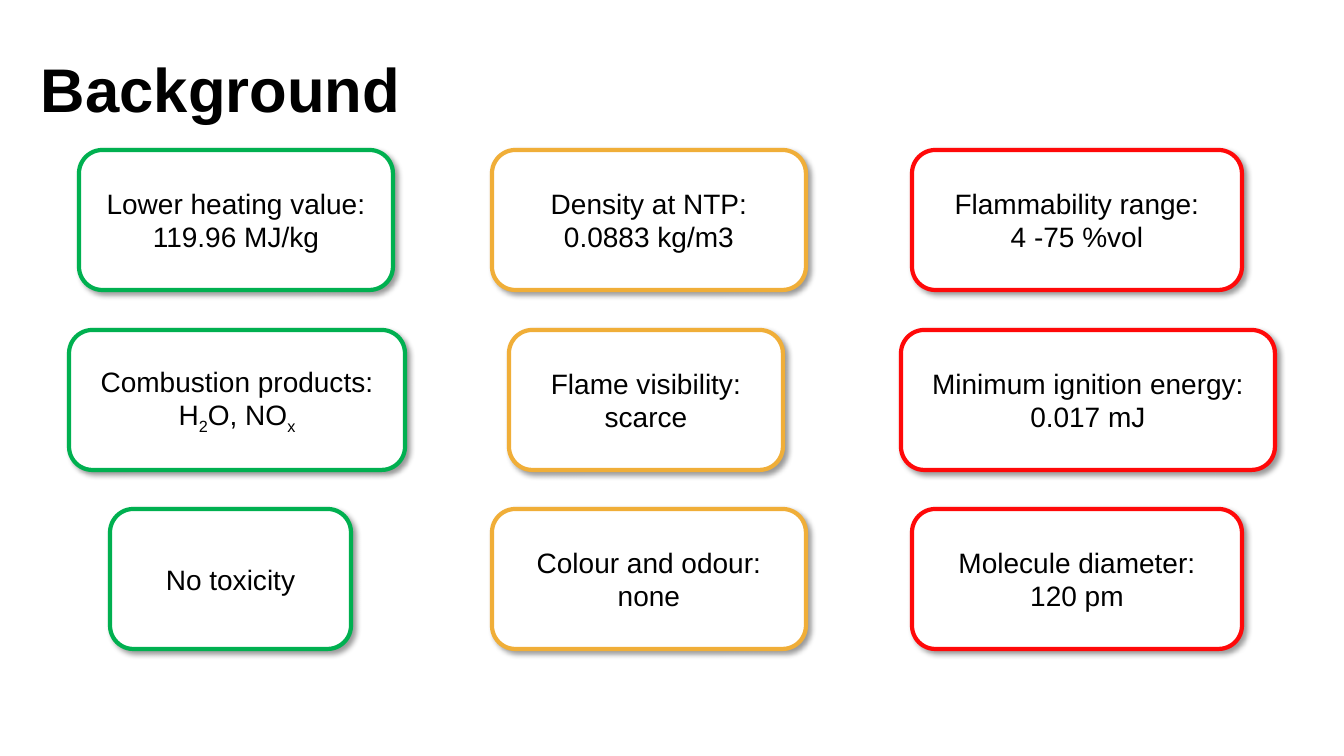
from lxml import etree
from pptx import Presentation
from pptx.dml.color import RGBColor
from pptx.enum.shapes import MSO_SHAPE
from pptx.enum.text import MSO_ANCHOR, PP_ALIGN
from pptx.oxml import parse_xml
from pptx.oxml.ns import nsdecls, qn
from pptx.util import Pt

PX = 914400 / 100.8
COLORS = {
    "white": "FFFFFF",
    "black": "000000",
    "green": "00B050",
    "amber": "F0AE38",
    "red": "FF0909",
}
ROW_TOPS = (150, 330, 509)
BOX_HEIGHT = 140
FACTS = {
    "amber": [
        (492, 314, ["Density at NTP:", "0.0883 kg/m3"]),
        (509, 274, ["Flame visibility:", "scarce"]),
        (492, 314, ["Colour and odour:", "none"]),
    ],
    "red": [
        (912, 330, ["Flammability range:", "4 -75 %vol"]),
        (901, 374, ["Minimum ignition energy:", "0.017 mJ"]),
        (912, 330, ["Molecule diameter:", "120 pm"]),
    ],
    "green": [
        (79, 314, ["Lower heating value:", "119.96 MJ/kg"]),
        (69, 336, ["Combustion products:", "H_2_O, NO_x_"]),
        (110, 241, ["No toxicity"]),
    ],
}
SHADOW = (
    f'<a:outerShdw {nsdecls("a")} blurRad="50800" dist="38100" dir="2700000" algn="tl" rotWithShape="0">'
    f'<a:srgbClr val="{COLORS["black"]}"><a:alpha val="40000"/></a:srgbClr></a:outerShdw>'
)


def px(*lengths):
    return [round(length * PX) for length in lengths]


def style_font(paragraph, size, bold=False):
    paragraph.font.name = "Arial"
    paragraph.font.size = Pt(size)
    paragraph.font.bold = bold
    paragraph.font.color.rgb = RGBColor.from_string(COLORS["black"])


presentation = Presentation()
presentation.slide_width, presentation.slide_height = px(1344, 756)
slide = presentation.slides.add_slide(presentation.slide_layouts[6])

for color, facts in FACTS.items():
    for top, (left, width, lines) in zip(ROW_TOPS, facts):
        box = slide.shapes.add_shape(MSO_SHAPE.ROUNDED_RECTANGLE, *px(left, top, width, BOX_HEIGHT))
        box.fill.solid()
        box.fill.fore_color.rgb = RGBColor.from_string(COLORS["white"])
        box.line.color.rgb = RGBColor.from_string(COLORS[color])
        box.line.width = Pt(3)
        box.shadow.inherit = False
        box.element.spPr.find(qn("a:effectLst")).append(parse_xml(SHADOW))

        frame = box.text_frame
        frame.word_wrap = True
        frame.vertical_anchor = MSO_ANCHOR.MIDDLE
        frame.margin_left, frame.margin_right, frame.margin_top, frame.margin_bottom = px(13, 13, 7, 7)
        for number, line in enumerate(lines):
            paragraph = frame.add_paragraph() if number else frame.paragraphs[0]
            paragraph.alignment = PP_ALIGN.CENTER
            style_font(paragraph, 20)
            for part, text in enumerate(line.split("_")):
                if text:
                    run = paragraph.add_run()
                    run.text = text
                    if part % 2:
                        run.font.element.set("baseline", "-25000") if hasattr(run.font, "element") else run._r.get_or_add_rPr().set("baseline", "-25000")

title = slide.shapes.add_textbox(*px(31, 20, 1159, 146))
title.text_frame.word_wrap = True
title.text_frame.vertical_anchor = MSO_ANCHOR.MIDDLE
heading = title.text_frame.paragraphs[0]
heading.text = "Background"
heading.line_spacing = 0.9
style_font(heading, 44, bold=True)

presentation.save("out.pptx")
